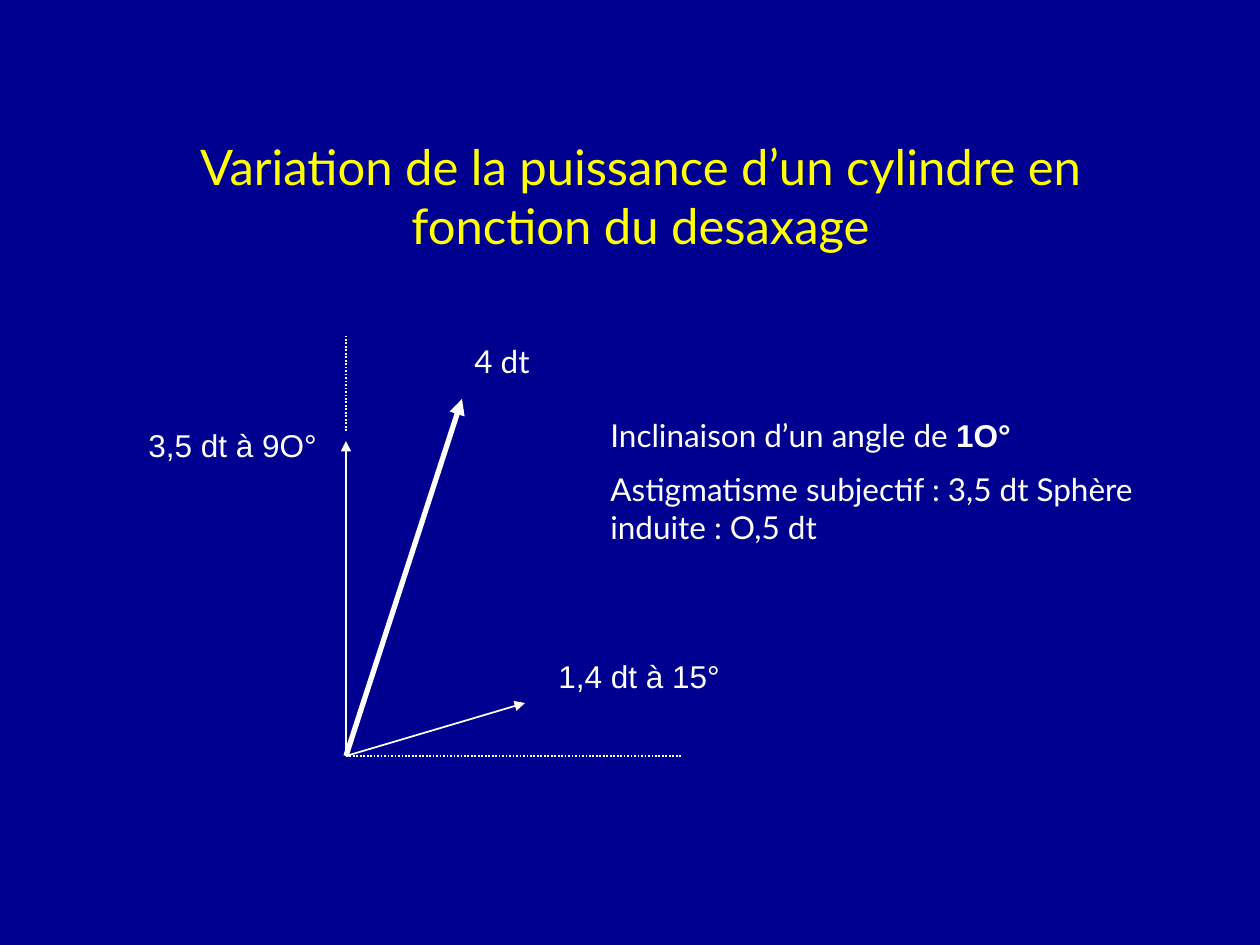
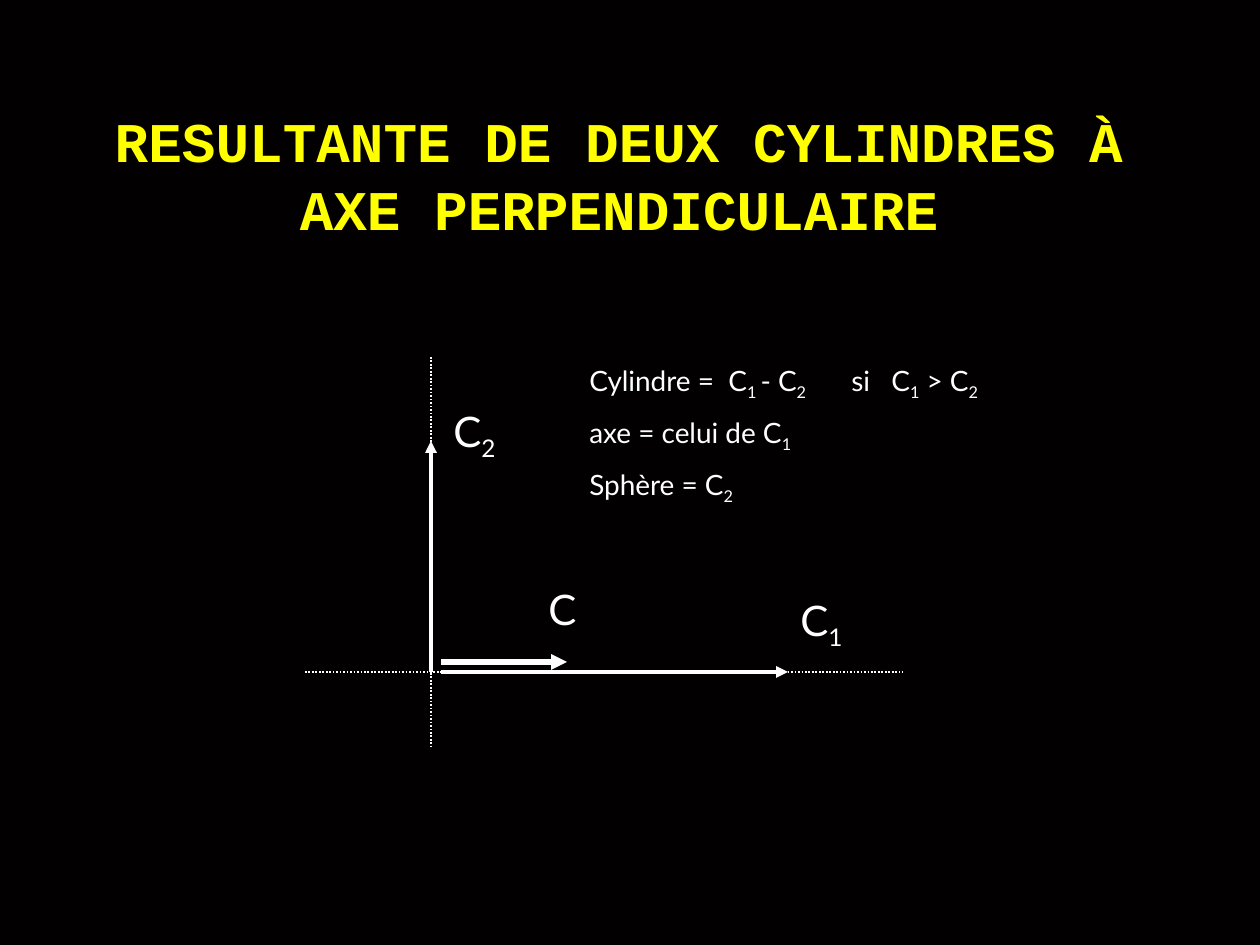
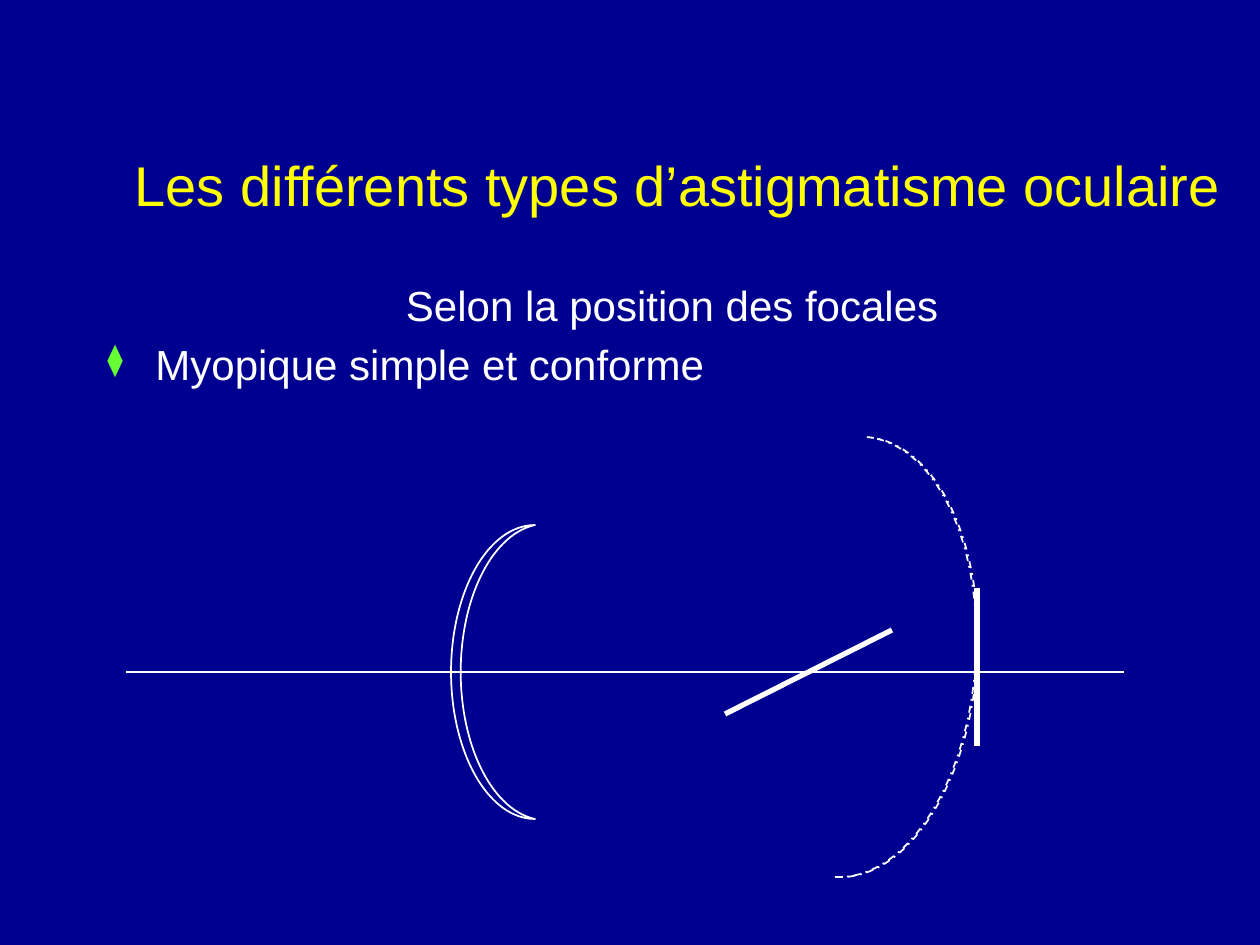
from dataclasses import dataclass

from lxml.etree import SubElement
from pptx import Presentation
from pptx.dml.color import RGBColor
from pptx.enum.dml import MSO_LINE_DASH_STYLE as Dash
from pptx.enum.shapes import MSO_CONNECTOR as Connector, MSO_SHAPE as Shape
from pptx.enum.text import MSO_ANCHOR as Anchor, PP_ALIGN as Align
from pptx.oxml.ns import qn
from pptx.util import Emu, Pt


@dataclass(frozen=True)
class Theme:
    navy: RGBColor = RGBColor.from_string("000090")
    black: RGBColor = RGBColor.from_string("020000")
    yellow: RGBColor = RGBColor.from_string("FFFF00")
    white: RGBColor = RGBColor.from_string("FFFFFF")
    bullet: str = "66FF33"
    sans: str = "Arial"
    humanist: str = "Lato"
    mono: str = "Courier New"
    title: int = 32
    small_title: int = 28
    body: int = 24
    label: int = 18
    formula: int = 16
    thin: float = 1
    medium: float = 2.25
    thick: float = 3


theme = Theme()
PX = 914400 / 126


def add_text(slide, paragraphs, box, size, font=theme.humanist, color=theme.white,
             bold=False, align=Align.LEFT, anchor=Anchor.TOP, gap=0, accent="subscript", tabs=()):
    shape = slide.shapes.add_textbox(*(Emu(round(length * PX)) for length in box))
    frame = shape.text_frame
    frame.word_wrap = True
    frame.vertical_anchor = anchor
    for index, text in enumerate(paragraphs):
        paragraph = frame.paragraphs[0] if index == 0 else frame.add_paragraph()
        paragraph.alignment = align
        if index:
            paragraph.space_before = Pt(gap)
        if "\t" in text:
            tab_list = SubElement(paragraph._p.get_or_add_pPr(), qn("a:tabLst"))
            for tab in tabs:
                SubElement(tab_list, qn("a:tab"), pos=str(round(tab * PX)), algn="l")
        for part, words in enumerate(text.split("|")):
            if not words:
                continue
            run = paragraph.add_run()
            run.text = words
            run.font.size = Pt(size)
            run.font.name = font
            run.font.bold = bold
            run.font.color.rgb = color
            if part % 2 and accent == "subscript":
                run.font._element.set("baseline", "-25000")
            elif part % 2:
                run.font.name = theme.sans
                run.font.bold = True
    return frame


def add_line(slide, start, end, width=theme.thin, dash=None, arrow=False):
    points = (Emu(round(length * PX)) for length in (*start, *end))
    connector = slide.shapes.add_connector(Connector.STRAIGHT, *points)
    connector.line.color.rgb = theme.white
    connector.line.width = Pt(width)
    if dash:
        connector.line.dash_style = dash
    if arrow:
        SubElement(connector.line._get_or_add_ln(), qn("a:tailEnd"), type="triangle")
    SubElement(connector._element.spPr, qn("a:effectLst"))


presentation = Presentation()
presentation.slide_width = Emu(round(1260 * PX))
presentation.slide_height = Emu(round(945 * PX))

titles = [
    ("Variation de la puissance d’un cylindre en fonction du desaxage",
     (105, 116, 1071, 158), theme.navy, theme.small_title, theme.humanist, False),
    ("RESULTANTE DE DEUX CYLINDRES À AXE PERPENDICULAIRE",
     (84, 95, 1071, 158), theme.black, theme.title, theme.mono, True),
    ("Les différents types d’astigmatisme oculaire",
     (95, 105, 1166, 158), theme.navy, theme.title, theme.sans, False),
]
for title, box, background, size, font, bold in titles:
    slide = presentation.slides.add_slide(presentation.slide_layouts[6])
    slide.background.fill.solid()
    slide.background.fill.fore_color.rgb = background
    add_text(slide, [title], box, size, font=font, color=theme.yellow, bold=bold,
             align=Align.CENTER, anchor=Anchor.MIDDLE)
misaligned, perpendicular, eye_types = presentation.slides

origin = (346, 756)
for tip, width in [((346, 441), theme.thin), ((462, 399), theme.thick), ((525, 703), theme.thin)]:
    add_line(misaligned, origin, tip, width, arrow=True)
add_line(misaligned, origin, (682, 756), dash=Dash.ROUND_DOT)
add_line(misaligned, (346, 431), (346, 336), dash=Dash.ROUND_DOT)
add_text(misaligned,
         ["Inclinaison d’un angle de |1Ο°|",
          "Astigmatisme subjectif : 3,5 dt Sphère induite : O,5 dt"],
         (598, 410, 598, 202), theme.label, gap=9, accent="strong")
for label, box, font in [
    ("4 dt", (462, 336, 158, 50), theme.humanist),
    ("3,5 dt à 9O°", (136, 420, 231, 50), theme.sans),
    ("1,4 dt à 15°", (546, 651, 325, 50), theme.sans),
]:
    add_text(misaligned, [label], box, theme.label, font=font)

for start, end, width in [
    ((441, 672), (788, 672), theme.medium),
    ((431, 672), (431, 441), theme.medium),
    ((441, 662), (567, 662), theme.thick),
]:
    add_line(perpendicular, start, end, width, arrow=True)
add_line(perpendicular, (305, 672), (903, 672), dash=Dash.ROUND_DOT)
add_line(perpendicular, (431, 357), (431, 746), dash=Dash.ROUND_DOT)
add_text(perpendicular,
         ["Cylindre =\tC|1 |- C|2|\tsi\tC|1| > C|2|", "axe = celui de C|1|", "Sphère = C|2|"],
         (577, 357, 630, 147), theme.formula, gap=8, tabs=(139, 262, 302))
for label, left, top in [("C|1|", 788, 588), ("C|2|", 441, 399), ("C", 536, 577)]:
    add_text(perpendicular, [label], (left, top, 242, 63), theme.body)

types_frame = add_text(eye_types,
                       ["Selon la position des focales ", "Myopique simple et conforme"],
                       (95, 273, 1166, 221), theme.body, font=theme.sans, gap=5)
heading, bullet_item = types_frame.paragraphs
heading.alignment = Align.CENTER
properties = bullet_item._p.get_or_add_pPr()
properties.set("marL", str(round(48 * PX)))
properties.set("indent", str(round(-48 * PX)))
SubElement(SubElement(properties, qn("a:buClr")), qn("a:srgbClr"), val=theme.bullet)
SubElement(properties, qn("a:buSzPct"), val="75000")
SubElement(properties, qn("a:buChar"), char="⧫")

add_line(eye_types, (126, 672), (1124, 672))
for box, rotation, crescent, dash in [
    ((451, 525, 84, 294), 0, 0.115, None),
    ((851, 441, 126, 441), 184.1, 0.012, Dash.DASH_DOT),
]:
    moon = eye_types.shapes.add_shape(Shape.MOON, *(Emu(round(length * PX)) for length in box))
    moon.shadow.inherit = False
    moon.adjustments[0] = crescent
    moon.rotation = rotation
    moon.fill.background()
    moon.line.color.rgb = theme.white
    moon.line.width = Pt(theme.thin)
    if dash:
        moon.line.dash_style = dash
add_line(eye_types, (892, 630), (725, 714), theme.thick)
add_line(eye_types, (977, 588), (977, 746), theme.thick)

presentation.save("out.pptx")
